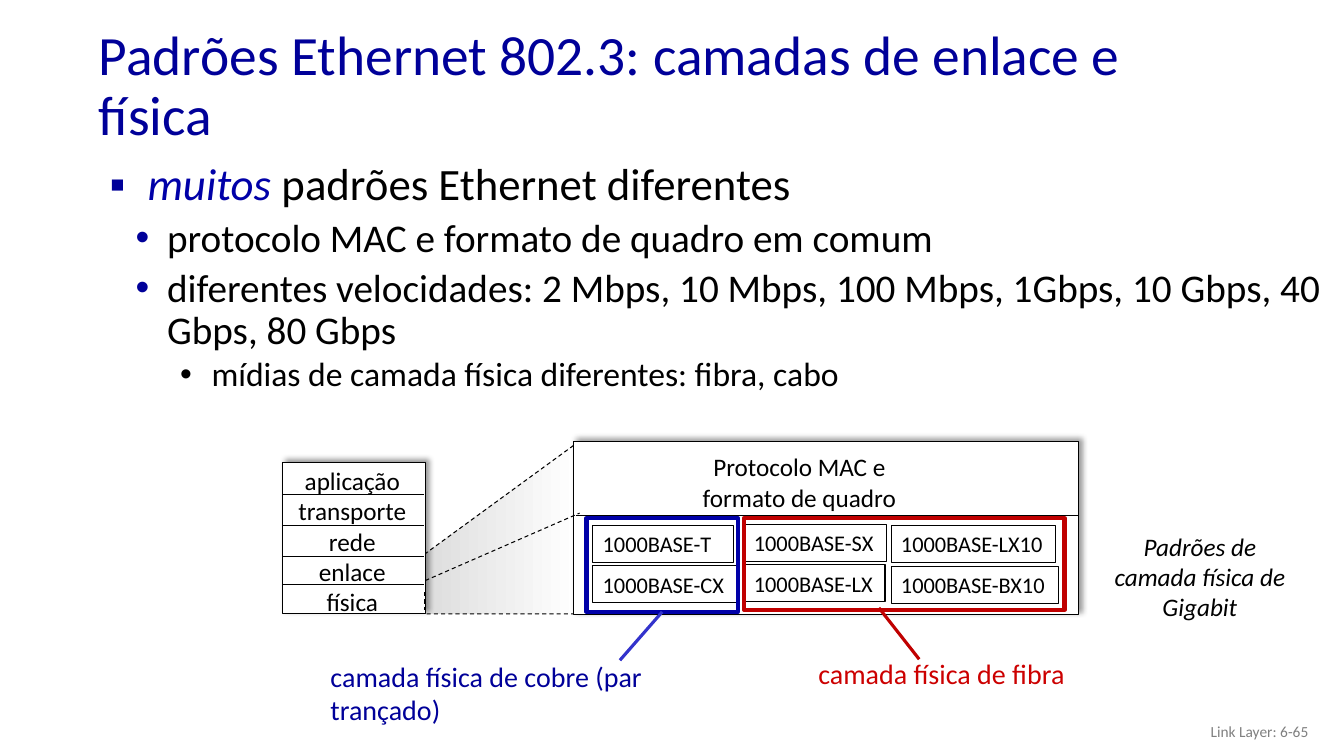
import pptx
import pptx.util
import pptx.dml.color
import pptx.enum.dml
import pptx.enum.shapes
import pptx.enum.text
import pptx.oxml
import pptx.oxml.ns
import lxml.etree

Pt = pptx.util.Pt
RGBColor = pptx.dml.color.RGBColor
ALIGN = pptx.enum.text.PP_ALIGN
ANCHOR = pptx.enum.text.MSO_ANCHOR
DASH = pptx.enum.dml.MSO_LINE.DASH
RECTANGLE = pptx.enum.shapes.MSO_SHAPE.RECTANGLE
STRAIGHT = pptx.enum.shapes.MSO_CONNECTOR.STRAIGHT

BLACK = RGBColor(0x00, 0x00, 0x00)
WHITE = RGBColor(0xFF, 0xFF, 0xFF)
GRAY = RGBColor(0x80, 0x80, 0x80)
LIGHT_GRAY = RGBColor(0xDD, 0xDD, 0xDD)
NAVY = RGBColor(0x00, 0x00, 0x99)
BLUE = RGBColor(0x00, 0x00, 0xA8)
LEADER_BLUE = RGBColor(0x33, 0x33, 0xCC)
RED = RGBColor(0xC0, 0x00, 0x00)
LABEL_RED = RGBColor(0xCC, 0x00, 0x00)


def write_text(paragraph, text, size, color, italic=False):
    run = paragraph.add_run()
    run.text = text
    font_format = {"name": "Calibri", "size": Pt(size), "italic": italic}
    for name, value in font_format.items():
        setattr(run.font, name, value)
    run.font.color.rgb = color


def add_line(start_x, start_y, end_x, end_y, color=BLACK, width=0.75, dash=None):
    line = slide.shapes.add_connector(
        STRAIGHT, Pt(start_x), Pt(start_y), Pt(end_x), Pt(end_y))
    line.line.color.rgb = color
    line.line.width = Pt(width)
    line.line.dash_style = dash
    lxml.etree.SubElement(line._element.spPr, pptx.oxml.ns.qn("a:effectLst"))
    return line


presentation = pptx.Presentation()
presentation.slide_width = Pt(960)
presentation.slide_height = Pt(540)
slide = presentation.slides.add_slide(presentation.slide_layouts[5])

# Title
title = slide.shapes.title
title_place = {"left": Pt(63.4), "top": Pt(27.4), "width": Pt(828), "height": Pt(70.6)}
for name, value in title_place.items():
    setattr(title, name, value)
title_frame = title.text_frame
frame_format = {"word_wrap": True, "vertical_anchor": ANCHOR.MIDDLE,
                "auto_size": pptx.enum.text.MSO_AUTO_SIZE.NONE}
for name, value in frame_format.items():
    setattr(title_frame, name, value)
title_paragraph = title_frame.paragraphs[0]
title_paragraph.alignment = ALIGN.LEFT
title_paragraph.line_spacing = 0.9
write_text(title_paragraph, "Padrões Ethernet 802.3: camadas de enlace e física", 39.6, NAVY)

# Bulleted text: level, left margin, hanging indent, size, bullet, bullet colour, runs
main_points = [
    (0, 27, 27, 32, "▪", NAVY,
     [("muitos ", BLUE, True), ("padrões Ethernet diferentes", BLACK, False)]),
    (1, 41, 22.5, 28, "•", NAVY,
     [("protocolo MAC e formato de quadro em comum", BLACK, False)]),
    (1, 41, 22.5, 28, "•", NAVY,
     [("diferentes velocidades: 2 Mbps, 10 Mbps, 100 Mbps, 1Gbps, "
       "10 Gbps, 40 Gbps, 80 Gbps", BLACK, False)]),
]
media_points = [
    (2, 72.7, 22.5, 24, "•", BLACK,
     [("mídias de camada física diferentes: fibra, cabo", BLACK, False)]),
]
for top, height, points in [(112.3, 125.3, main_points), (252, 36.7, media_points)]:
    frame = slide.shapes.add_textbox(Pt(71.3), Pt(top), Pt(882), Pt(height)).text_frame
    frame.word_wrap = True
    for index, (level, margin, hanging, size, bullet, bullet_color, runs) in enumerate(points):
        paragraph = frame.add_paragraph() if index else frame.paragraphs[0]
        properties = paragraph._p.get_or_add_pPr()
        properties.set("marL", str(Pt(margin)))
        properties.set("indent", str(-Pt(hanging)))
        namespace = pptx.oxml.ns.nsdecls("a")
        for xml in (f'<a:buClr {namespace}><a:srgbClr val="{bullet_color}"/></a:buClr>',
                    f'<a:buFont {namespace} typeface="Arial"/>',
                    f'<a:buChar {namespace} char="{bullet}"/>'):
            properties.append(pptx.oxml.parse_xml(xml))
        paragraph.level = level
        paragraph.line_spacing = 0.9
        paragraph.space_before = Pt(0.2 * size if index else 0)
        for text, color, italic in runs:
            write_text(paragraph, text, size, color, italic)

# Shaded zoom from the stack to the link and physical layers
builder = slide.shapes.build_freeform(Pt(409.7), Pt(318.2), scale=1.0)
builder.add_line_segments(
    [(Pt(x), Pt(y)) for x, y in [(303.1, 396), (303.8, 438.5), (412.6, 438.5)]], close=True)
zoom = builder.convert_to_shape()
zoom.shadow.inherit = False
zoom.fill.gradient()
zoom.fill.gradient_angle = 0
for stop, color in zip(zoom.fill.gradient_stops, (LIGHT_GRAY, WHITE)):
    stop.color.rgb = color
zoom.line.color.rgb = BLACK
zoom.line.width = Pt(0.75)
zoom.line.dash_style = DASH

# Shadowed frames of the protocol stack and of the Ethernet layers
for left, top, width, height in [(201.6, 330.5, 102.2, 108), (409.7, 315.4, 360.7, 123.8)]:
    frame_shape = slide.shapes.add_shape(RECTANGLE, Pt(left), Pt(top), Pt(width), Pt(height))
    frame_shape.fill.solid()
    frame_shape.fill.fore_color.rgb = WHITE
    frame_shape.line.color.rgb = BLACK
    frame_shape.line.width = Pt(0.75)
    frame_shape._element.spPr.append(pptx.oxml.parse_xml(
        f'<a:effectLst {pptx.oxml.ns.nsdecls("a")}>'
        f'<a:outerShdw blurRad="{Pt(4)}" dist="{Pt(3)}" dir="18900000" algn="tl" rotWithShape="0">'
        '<a:srgbClr val="000000"><a:alpha val="40000"/></a:srgbClr>'
        '</a:outerShdw></a:effectLst>'))

# Dividers and dashed lines
for divider_y in (353.5, 375.1, 397.4, 417.2):
    add_line(201.6, divider_y, 303.1, divider_y)
for edge_x in (201.6, 303.1):
    add_line(edge_x, 423, edge_x, 436, dash=DASH)
add_line(411.1, 367.9, 770.4, 367.9)
add_line(303.8, 414.7, 414, 366.5, dash=DASH)

# Gigabit standards and the outlines of the copper and fibre groups
boxes = [
    ("1000BASE-T", 423.4, 375.1, 100.8, 26.6, BLACK, 0.75),
    ("1000BASE-CX", 423.4, 403.9, 103, 26.6, BLACK, 0.75),
    ("1000BASE-SX", 531.4, 374.4, 101.5, 26.6, BLACK, 0.75),
    ("1000BASE-LX", 531.4, 403.2, 100.8, 26.6, BLACK, 0.75),
    ("1000BASE-LX10", 636.5, 375.1, 117.4, 26.6, BLACK, 0.75),
    ("1000BASE-BX10", 636.5, 404.6, 119.5, 26.6, BLACK, 0.75),
    ("", 531.4, 370.1, 229, 65.5, RED, 3),
    ("", 419, 370.1, 108, 67, BLUE, 3),
]
for label, left, top, width, height, color, line_width in boxes:
    box = slide.shapes.add_shape(RECTANGLE, Pt(left), Pt(top), Pt(width), Pt(height))
    box.shadow.inherit = False
    box.fill.background()
    box.line.color.rgb = color
    box.line.width = Pt(line_width)
    if label:
        box.text_frame.word_wrap = False
        box.text_frame.paragraphs[0].alignment = ALIGN.LEFT
        write_text(box.text_frame.paragraphs[0], label, 16, BLACK)
copper_outline = box

# Leaders to the group labels
copper_leader = add_line(473, 437.1, 442.8, 471.6, LEADER_BLUE, 2.25)
copper_leader.begin_connect(copper_outline, 2)
add_line(627.8, 434.2, 656.6, 470.9, RED, 2.25)

# Labels: lines, place, size, colour, alignment, italic, wrap
labels = [
    (["aplicação", "transporte", "rede", "enlace", "física"],
     (205.2, 329, 92.9, 116.6), 18, BLACK, ALIGN.CENTER, False, False),
    (["Protocolo MAC e", "formato de quadro"],
     (491.8, 319, 158.4, 51.1), 18, BLACK, ALIGN.CENTER, False, False),
    (["camada física de cobre (par trançado)"],
     (229, 467.3, 306.7, 55.4), 20, NAVY, ALIGN.LEFT, False, True),
    (["camada física de fibra"],
     (577.4, 465.1, 193, 31.7), 20, LABEL_RED, ALIGN.LEFT, False, False),
    (["Padrões de camada física de Gigabit"],
     (786.2, 375.8, 141.8, 72.7), 18, BLACK, ALIGN.CENTER, True, True),
    (["Link Layer: 6-65"],
     (725.8, 512, 216, 20.8), 11, GRAY, ALIGN.RIGHT, False, True),
]
for lines, place, size, color, alignment, italic, wrap in labels:
    frame = slide.shapes.add_textbox(*[Pt(value) for value in place]).text_frame
    frame.word_wrap = wrap
    for index, text in enumerate(lines):
        paragraph = frame.add_paragraph() if index else frame.paragraphs[0]
        paragraph.alignment = alignment
        write_text(paragraph, text, size, color, italic)

presentation.save("out.pptx")
